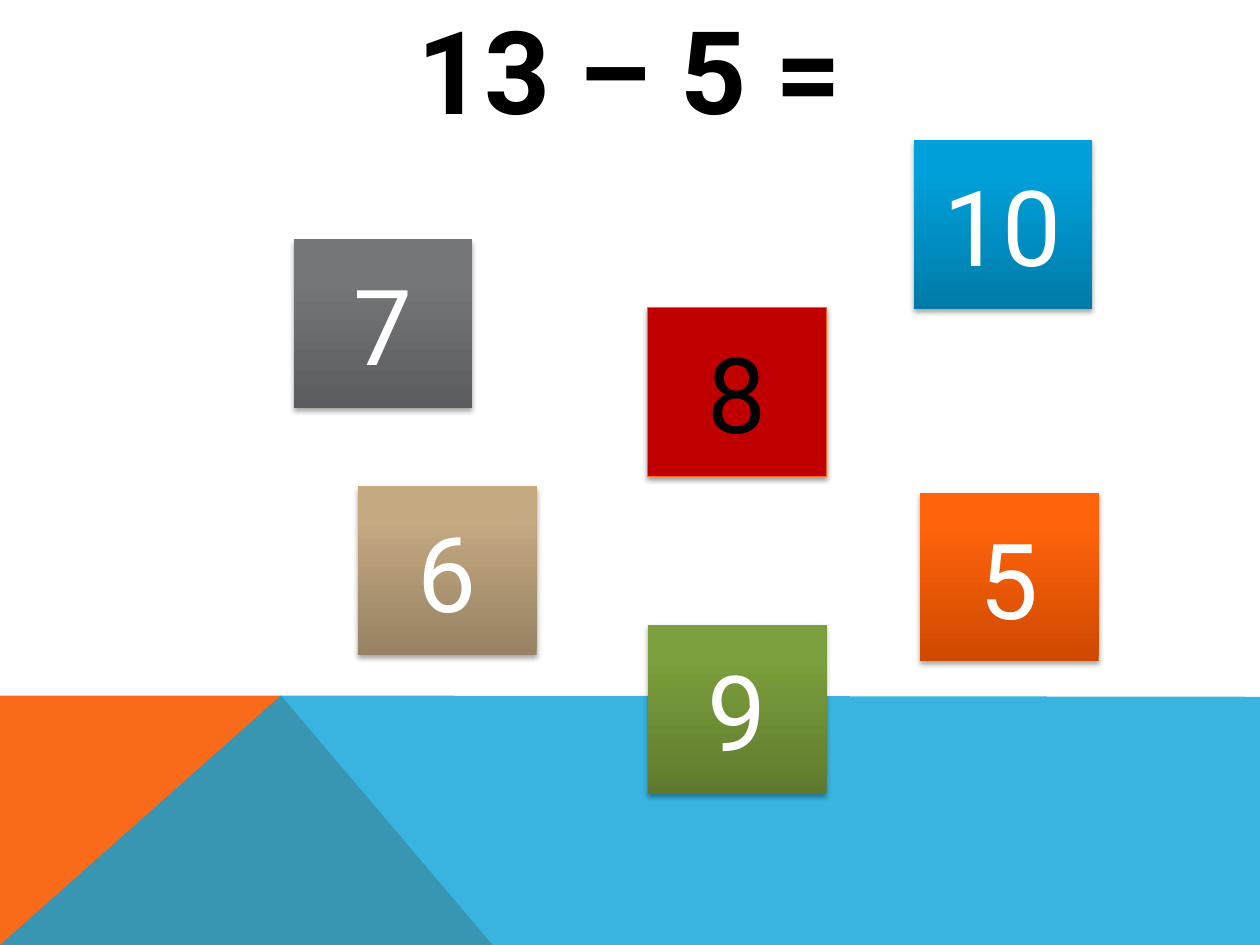
from copy import deepcopy
from pptx import Presentation
from pptx.dml.color import RGBColor as RGB
from pptx.enum.shapes import MSO_SHAPE as Shape
from pptx.enum.text import MSO_ANCHOR as Anchor, PP_ALIGN as Align
from pptx.oxml import parse_xml
from pptx.oxml.ns import nsdecls, qn
from pptx.util import Inches, Pt

TITLE = "13 – 5 ="
TILES = [
    ("9", 5.14, 4.96, "green"),
    ("10", 7.25, 1.11, "blue"),
    ("6", 2.84, 3.86, "tan"),
    ("7", 2.33, 1.9, "gray"),
    ("5", 7.3, 3.91, "orange"),
    ("8", 5.14, 2.44, "red"),
]
BANDS = [
    ([(0, 7.5), (0, 5.52), (2.23, 5.52), (3.91, 7.5)], "F96A1B", 100),
    ([(0, 7.5), (2.23, 5.52), (10, 5.53), (10, 7.5)], "08A1D9", 80),
]
THEME = {
    "font": "Roboto",
    "title": 66,
    "digit": 60,
    "ink": "000000",
    "light": "FFFFFF",
    "edge": "F96615",
    "stops": (0, 0.8, 1),
    "fills": {
        "green": ("5F7A2E", "7B9F3C", "7CA13B"),
        "blue": ("007BA8", "00A0DA", "00A0DB"),
        "tan": ("978263", "C4A981", "C6AA80"),
        "gray": ("5A5C5F", "75777B", "75787C"),
        "orange": ("CE4900", "FF630C", "FF640E"),
        "red": ("C00000",),
    },
}
WIDE, TALL = 1.42, 1.34


def hue(code):
    return RGB.from_string(code)


def write(shape, text, size, color, bold=False):
    frame = shape.text_frame
    frame.word_wrap = True
    frame.vertical_anchor = Anchor.MIDDLE
    para = frame.paragraphs[0]
    para.alignment = Align.CENTER
    run = para.add_run()
    run.text = text
    font = run.font
    font.name, font.size, font.bold = THEME["font"], Pt(size), bold
    font.color.rgb = hue(color)


def solid(shape, code, alpha=100):
    shape.fill.solid()
    shape.fill.fore_color.rgb = hue(code)
    if alpha < 100:
        tone = shape._element.spPr.find(".//" + qn("a:srgbClr"))
        tone.append(parse_xml(f'<a:alpha {nsdecls("a")} val="{alpha * 1000}"/>'))


def blend(shape, codes):
    fill = shape.fill
    fill.gradient()
    fill.gradient_angle = 90
    stops = shape._element.spPr.find(".//" + qn("a:gsLst"))
    stops.append(deepcopy(stops[0]))
    for stop, place, code in zip(fill.gradient_stops, THEME["stops"], codes):
        stop.position = place
        stop.color.rgb = hue(code)


def shade(shape, alpha, drop):
    shape.shadow.inherit = False
    shape._element.spPr.find(qn("a:effectLst")).append(parse_xml(
        f'<a:outerShdw {nsdecls("a")} blurRad="{Pt(3.1)}" dist="{Pt(drop)}" '
        f'dir="5400000" rotWithShape="0"><a:srgbClr val="{THEME["ink"]}">'
        f'<a:alpha val="{alpha * 1000}"/></a:srgbClr></a:outerShdw>'))


def add_band(slide, points, code, alpha):
    spots = [(Inches(x), Inches(y)) for x, y in points]
    path = slide.shapes.build_freeform(*spots[0])
    path.add_line_segments(spots[1:], close=True)
    band = path.convert_to_shape()
    band.shadow.inherit = False
    solid(band, code, alpha)
    band.line.fill.background()


def add_tile(slide, text, left, top, name):
    tile = slide.shapes.add_shape(
        Shape.RECTANGLE, Inches(left), Inches(top), Inches(WIDE), Inches(TALL))
    codes = THEME["fills"][name]
    if len(codes) == 1:
        solid(tile, codes[0])
        tile.line.color.rgb = hue(THEME["edge"])
        tile.line.width = Pt(0.75)
        shade(tile, 38, 1.6)
        color = THEME["ink"]
    else:
        blend(tile, codes)
        tile.line.fill.background()
        shade(tile, 35, 1.8)
        color = THEME["light"]
    write(tile, text, THEME["digit"], color)


def main():
    deck = Presentation()
    deck.slide_width, deck.slide_height = Inches(10), Inches(7.5)
    slide = deck.slides.add_slide(deck.slide_layouts[6])
    for band in BANDS:
        add_band(slide, *band)
    title = slide.shapes.add_textbox(
        Inches(0.17), Inches(0.13), Inches(9.66), Inches(0.83))
    write(title, TITLE, THEME["title"], THEME["ink"], bold=True)
    for tile in TILES:
        add_tile(slide, *tile)
    deck.save("out.pptx")


if __name__ == "__main__":
    main()
